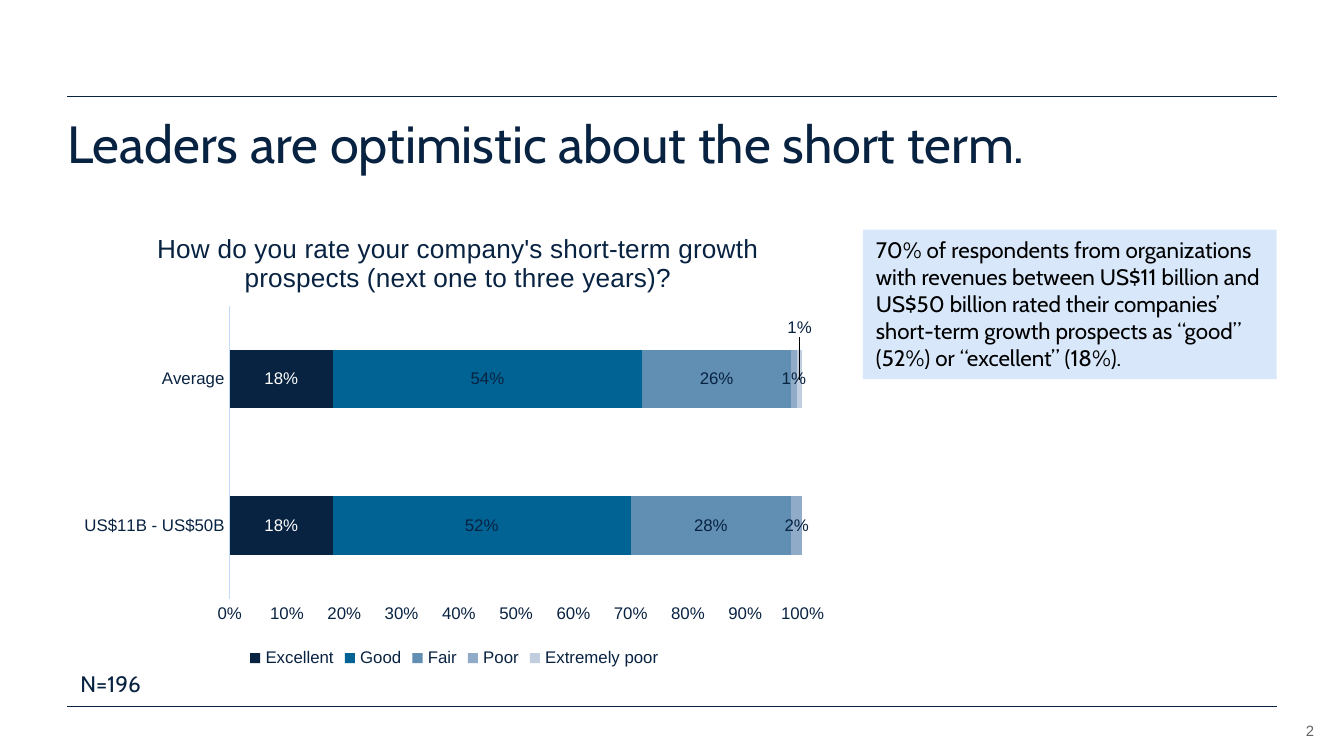
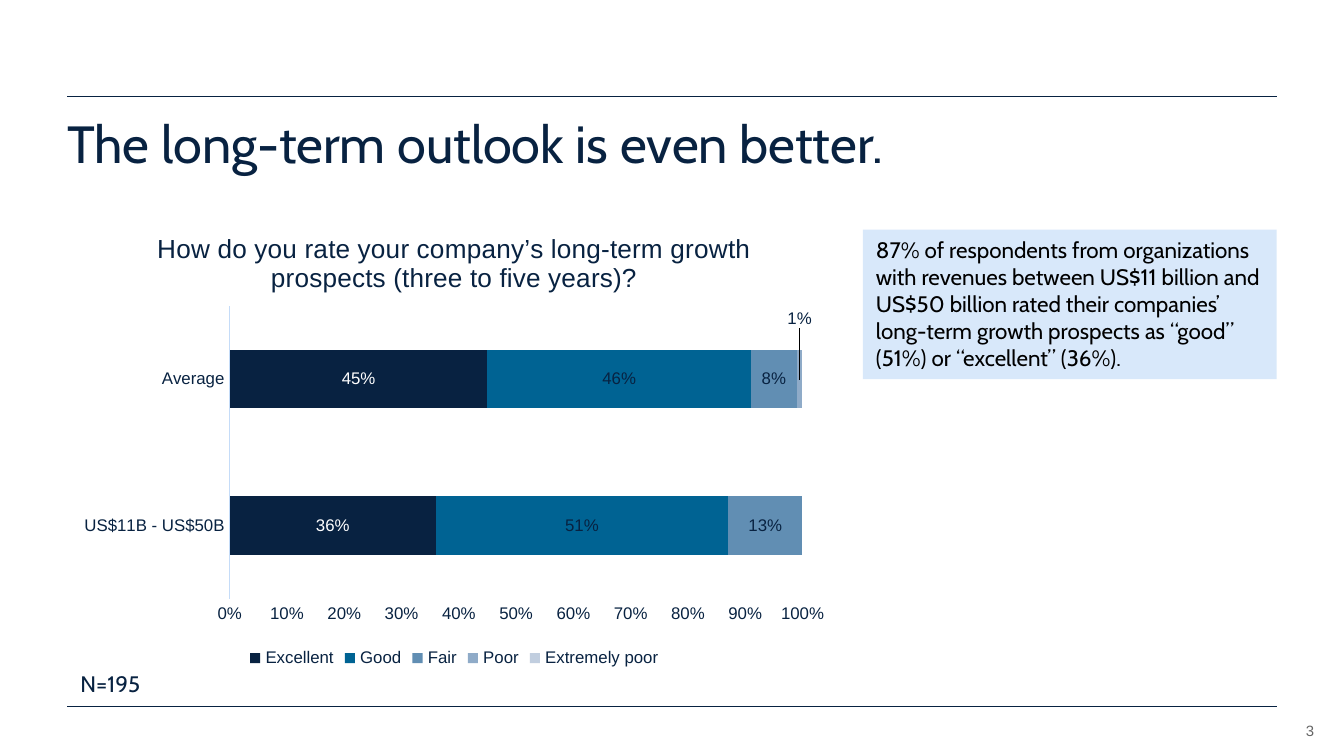
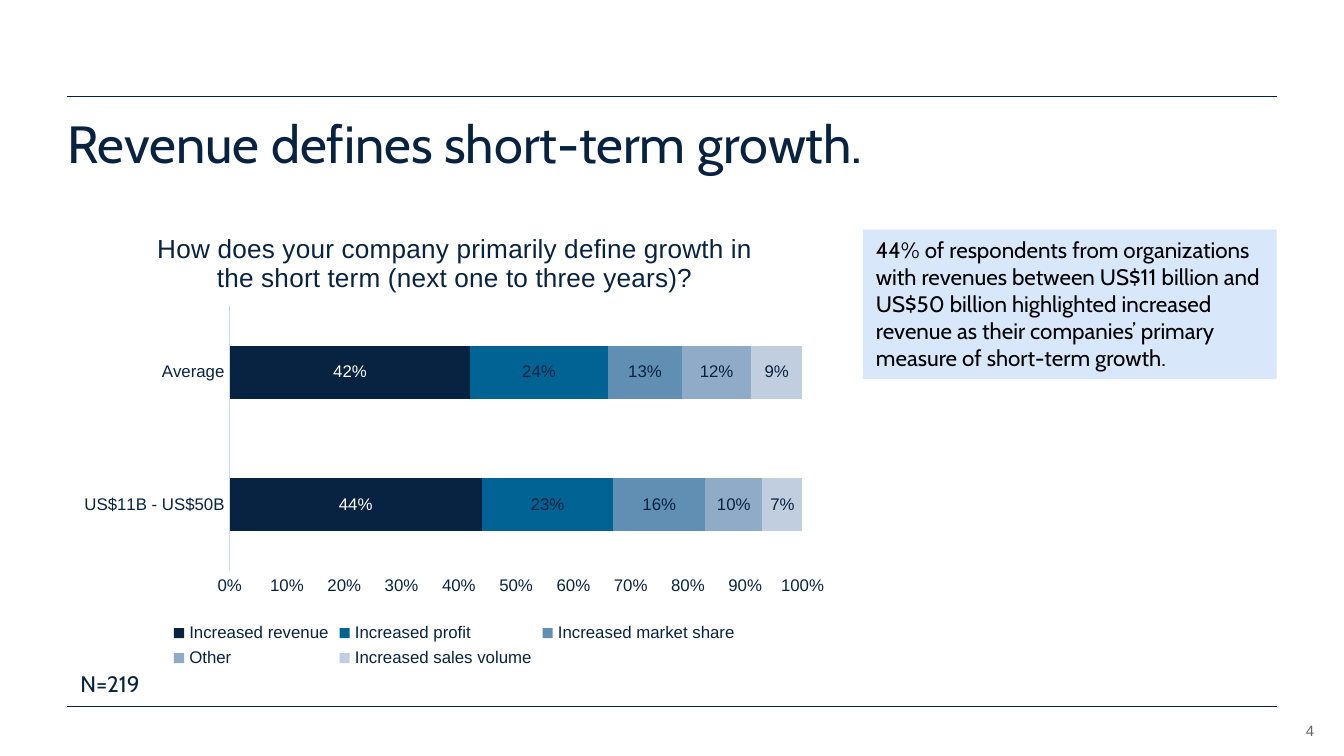
from dataclasses import dataclass

from pptx import Presentation
from pptx.chart.data import CategoryChartData
from pptx.dml.color import RGBColor
from pptx.enum.chart import XL_CHART_TYPE, XL_LABEL_POSITION, XL_LEGEND_POSITION, XL_TICK_MARK
from pptx.enum.shapes import MSO_CONNECTOR, MSO_SHAPE
from pptx.enum.text import MSO_ANCHOR, MSO_AUTO_SIZE, PP_ALIGN
from pptx.oxml import parse_xml
from pptx.oxml.ns import nsdecls, qn
from pptx.util import Pt


@dataclass(frozen=True)
class Theme:
    """Colours, fonts and type sizes shared by all slides."""

    navy: str = "082241"
    white: str = "FFFFFF"
    black: str = "000000"
    grey: str = "666666"
    pale: str = "D8E8FA"
    axis: str = "C5DCF8"
    ratings: tuple = ("082241", "006393", "618EB3", "8FABC8", "C1CEDF")
    text_face: str = "Cabin"
    chart_face: str = "Arial"
    headline: float = 28
    question: float = 14
    body: float = 12
    chart: float = 10
    label: float = 9
    number: float = 8


def style(font, face, size, color):
    """Set face, size and colour of a font."""
    font.name, font.size, font.bold = face, Pt(size), False
    font.color.rgb = RGBColor.from_string(color)


def manual_layout(x, y, size=None, edge=True):
    """Return a chart layout element in fractions of the chart."""
    modes = '<c:xMode val="edge"/><c:yMode val="edge"/>' if edge else ""
    target = '<c:layoutTarget val="inner"/>' if size else ""
    extent = f'<c:w val="{size[0]}"/><c:h val="{size[1]}"/>' if size else ""
    return parse_xml(
        f'<c:layout {nsdecls("c")}><c:manualLayout>{target}{modes}'
        f'<c:x val="{x}"/><c:y val="{y}"/>{extent}</c:manualLayout></c:layout>'
    )


class SurveyDeck:
    """Builds survey slides in one style."""

    LEFT, RIGHT = 36, 684

    def __init__(self, theme):
        """Start an empty deck."""
        self.theme = theme
        self.deck = Presentation()
        self.deck.slide_width, self.deck.slide_height = Pt(720), Pt(405)
        self.slide = None

    def new_slide(self, headline, number):
        """Add a slide with rules, headline and page number."""
        t = self.theme
        self.slide = self.deck.slides.add_slide(self.deck.slide_layouts[6])
        for y in (51.8, 378.5):
            self.rule(y)
        page = self.text((670.3, 383, 33.8, 13), str(number), t.chart_face, t.number, t.grey, inset=False)
        page.vertical_anchor = MSO_ANCHOR.BOTTOM
        page.paragraphs[0].alignment = PP_ALIGN.RIGHT
        title = self.text((self.LEFT, 63.4, 648, 39.6), headline, t.text_face, t.headline, t.navy, inset=False)
        title.paragraphs[0].line_spacing = 0.9

    def rule(self, y):
        """Draw a thin line across the content width."""
        line = self.slide.shapes.add_connector(
            MSO_CONNECTOR.STRAIGHT, Pt(self.LEFT), Pt(y), Pt(self.RIGHT), Pt(y))
        line.line.color.rgb = RGBColor.from_string(self.theme.navy)
        line.line.width = Pt(0.5)
        line.element.spPr.append(parse_xml(f'<a:effectLst {nsdecls("a")}/>'))

    def fill_text(self, frame, words, face, size, color):
        """Fill a text frame with one wrapped paragraph."""
        frame.word_wrap = True
        frame.vertical_anchor = MSO_ANCHOR.TOP
        paragraph = frame.paragraphs[0]
        paragraph.text = words
        paragraph.alignment = PP_ALIGN.LEFT
        style(paragraph.font, face, size, color)

    def text(self, box, words, face, size, color, inset=True):
        """Add a text box and return its frame."""
        frame = self.slide.shapes.add_textbox(*map(Pt, box)).text_frame
        self.fill_text(frame, words, face, size, color)
        if not inset:
            frame.margin_left = frame.margin_top = frame.margin_right = frame.margin_bottom = 0
        return frame

    def sample_size(self, count):
        """Note the number of respondents."""
        t = self.theme
        frame = self.text((self.LEFT, 355.7, 120, 21.6), f"N={count}", t.text_face, t.body, t.navy)
        frame.auto_size = MSO_AUTO_SIZE.SHAPE_TO_FIT_TEXT

    def callout(self, finding):
        """Add the tinted box with the main finding."""
        t = self.theme
        panel = self.slide.shapes.add_shape(
            MSO_SHAPE.RECTANGLE, Pt(462.2), Pt(123.1), Pt(221.8), Pt(80))
        panel.shadow.inherit = False
        panel.fill.solid()
        panel.fill.fore_color.rgb = RGBColor.from_string(t.pale)
        panel.line.fill.background()
        self.fill_text(panel.text_frame, finding, t.text_face, t.body, t.black)
        panel.text_frame.auto_size = MSO_AUTO_SIZE.SHAPE_TO_FIT_TEXT

    def bar_chart(self, question, answers, plot_height, raised=None):
        """Add the stacked bars; raised is a series index and its label shift."""
        t = self.theme
        data = CategoryChartData(number_format="0%")
        data.categories = ["US$11B - US$50B", "Average"]
        for answer, shares in answers.items():
            data.add_series(answer, shares)
        chart = self.slide.shapes.add_chart(
            XL_CHART_TYPE.BAR_STACKED_100, Pt(self.LEFT), Pt(111.6), Pt(414.7), Pt(249.1), data).chart
        style(chart.font, t.chart_face, t.chart, t.navy)

        heading = chart.chart_title.text_frame.paragraphs[0]
        heading.text = question
        style(heading.font, t.chart_face, t.question, t.navy)
        chart.chart_title.include_in_layout = False

        chart.has_legend = True
        chart.legend.position = XL_LEGEND_POSITION.BOTTOM
        chart.legend.include_in_layout = False
        style(chart.legend.font, t.chart_face, t.label, t.navy)

        for axis in (chart.category_axis, chart.value_axis):
            axis.major_tick_mark = axis.minor_tick_mark = XL_TICK_MARK.NONE
            axis.has_major_gridlines = False
            style(axis.tick_labels.font, t.chart_face, t.label, t.navy)
        chart.category_axis.format.line.color.rgb = RGBColor.from_string(t.axis)
        chart.category_axis.format.line.width = Pt(0.75)
        chart.value_axis.format.line.fill.background()
        chart.value_axis.tick_labels.number_format = "0%"
        chart.value_axis.tick_labels.number_format_is_linked = False

        bars = chart.plots[0]
        bars.gap_width, bars.overlap, bars.vary_by_categories = 150, 100, False
        for index, (series, color) in enumerate(zip(bars.series, t.ratings)):
            series.format.fill.solid()
            series.format.fill.fore_color.rgb = RGBColor.from_string(color)
            labels = series.data_labels
            labels.show_value = True
            labels.number_format, labels.number_format_is_linked = "0%", False
            labels.position = XL_LABEL_POSITION.CENTER
            style(labels.font, t.chart_face, t.label, t.navy if index else t.white)

        if raised:
            self.raise_label(chart, *raised)
        self.place(chart, plot_height)

    def raise_label(self, chart, index, shift):
        """Move the label of the Average bar above its narrow segment."""
        t = self.theme
        label = chart.plots[0].series[index].points[1].data_label
        label.position = XL_LABEL_POSITION.CENTER
        style(label.font, t.chart_face, t.label, t.navy)
        idx = next(chart.element.iter(qn("c:dLbl"))).find(qn("c:idx"))
        idx.addnext(parse_xml(f'<c:numFmt {nsdecls("c")} formatCode="0%" sourceLinked="0"/>'))
        idx.addnext(manual_layout(0, shift, edge=False))

    def place(self, chart, plot_height):
        """Fix the places of the chart heading and the plot."""
        title = chart.element.chart.find(qn("c:title"))
        plot = chart.element.chart.plotArea
        for part in (title, plot):
            for old in part.findall(qn("c:layout")):
                part.remove(old)
        title.find(qn("c:tx")).addnext(manual_layout(0.11, 0.04))
        plot.insert(0, manual_layout(0.21, 0.21, (0.74, plot_height)))


def main():
    """Build and save the three survey slides."""
    survey = SurveyDeck(Theme())
    ratings = ("Excellent", "Good", "Fair", "Poor", "Extremely poor")
    measures = ("Increased revenue", "Increased profit", "Increased market share",
                "Other", "Increased sales volume")
    respondents = "of respondents from organizations with revenues between US$11 billion and US$50 billion"
    pages = [
        ("Leaders are optimistic about the short term.",
         f"70% {respondents} rated their companies’ short-term growth prospects "
         "as “good” (52%) or “excellent” (18%).", 196,
         "How do you rate your company's short-term growth prospects (next one to three years)?",
         dict(zip(ratings, [(0.18, 0.18), (0.52, 0.54), (0.28, 0.26), (0.02, 0.01), (None, 0.01)])),
         0.63, (4, -0.11)),
        ("The long-term outlook is even better.",
         f"87% {respondents} rated their companies’ long-term growth prospects "
         "as “good” (51%) or “excellent” (36%).", 195,
         "How do you rate your company’s long-term growth prospects (three to five years)?",
         dict(zip(ratings, [(0.36, 0.45), (0.51, 0.46), (0.13, 0.08), (None, 0.01), (None, None)])),
         0.63, (3, -0.13)),
        ("Revenue defines short-term growth.",
         f"44% {respondents} highlighted increased revenue as their companies’ "
         "primary measure of short-term growth.", 219,
         "How does your company primarily define growth in the short term (next one to three years)?",
         dict(zip(measures, [(0.44, 0.42), (0.23, 0.24), (0.16, 0.13), (0.1, 0.12), (0.07, 0.09)])),
         0.57, None),
    ]
    for number, (headline, finding, count, question, answers, height, raised) in enumerate(pages, 2):
        survey.new_slide(headline, number)
        survey.callout(finding)
        survey.bar_chart(question, answers, height, raised)
        survey.sample_size(count)
    survey.deck.save("out.pptx")


if __name__ == "__main__":
    main()
